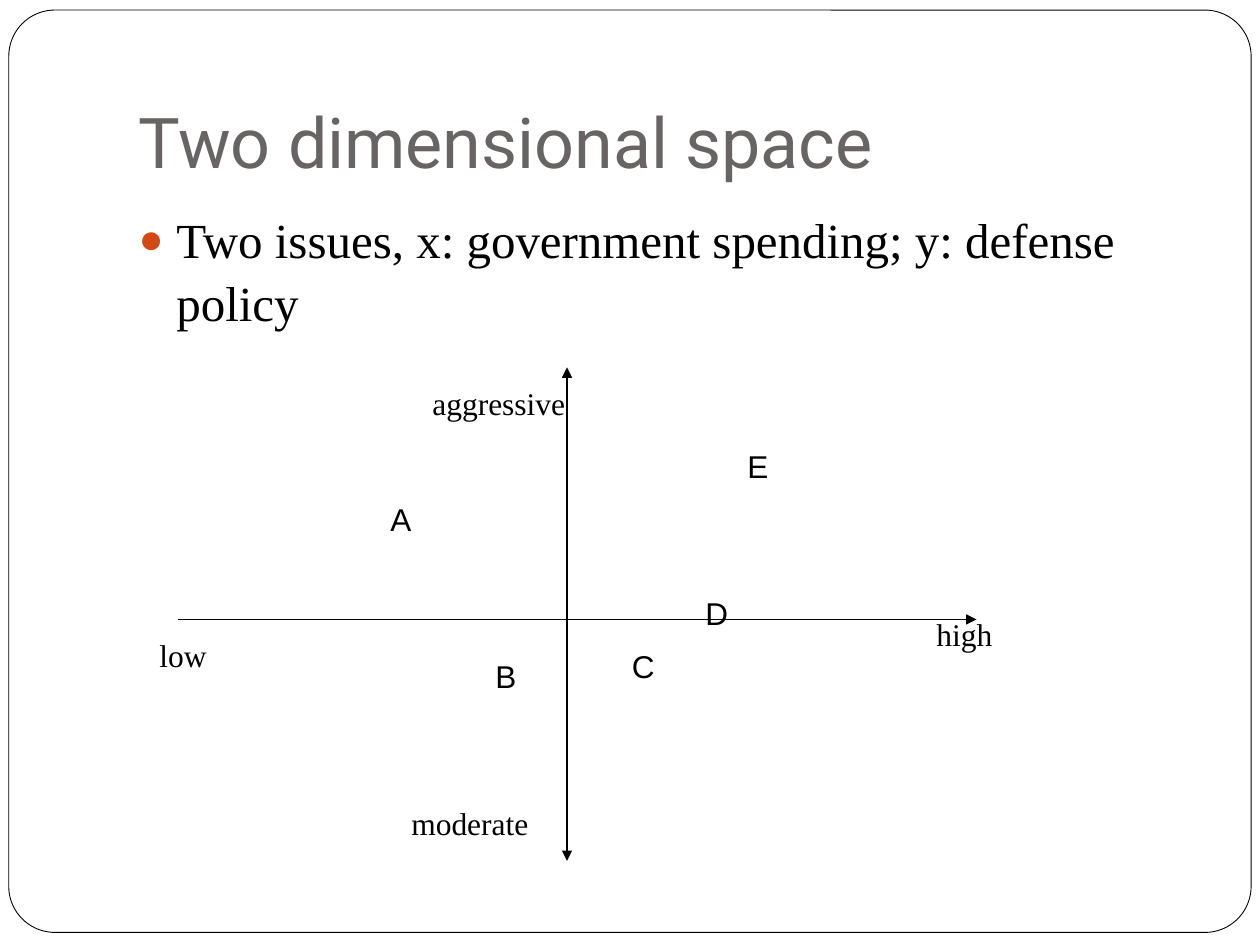
from pptx import Presentation
from pptx.dml.color import RGBColor
from pptx.enum.shapes import MSO_CONNECTOR as Connector, MSO_SHAPE as Shape
from pptx.enum.text import MSO_ANCHOR as Anchor, MSO_AUTO_SIZE as AutoSize, PP_ALIGN as Align
from pptx.oxml.ns import qn
from pptx.util import Inches, Pt
from lxml.etree import SubElement

# Content
TITLE = "Two dimensional space"
BULLET = "Two issues, x: government spending; y: defense policy"
SERIF, SANS, HEADING = "Times New Roman", "Arial", "Roboto"
COLORS = {"paper": "FFFFFF", "ink": "000000", "title": "696464", "bullet": "D34817"}

# Diagram positions in twelfths of an inch
GRID = 1 / 12
AXIS_LABELS = [("high", 88, 58), ("aggressive", 40, 36), ("moderate", 38, 76), ("low", 14, 60)]
POINTS = [("C", 59, 61), ("E", 70, 42), ("B", 46, 62), ("D", 66, 56), ("A", 36, 47)]
LABEL_WIDTH, POINT_WIDTH, LABEL_HEIGHT = 19, 5, 0.4
AXES = [  # start, end, arrowheads
    ((54, 35), (54, 82), ("headEnd", "tailEnd")),
    ((17, 59), (93, 59), ("tailEnd",)),
]


def color(name):
    return RGBColor.from_string(COLORS[name])


def grid(*units):
    return [Inches(unit * GRID) for unit in units]


def place(shape, left, top, width, height):
    shape.left, shape.top = Inches(left), Inches(top)
    shape.width, shape.height = Inches(width), Inches(height)


def style(paragraph, font_name, size, color_name):
    paragraph.alignment = Align.LEFT
    font = paragraph.runs[0].font
    font.name, font.size = font_name, Pt(size)
    font.color.rgb = color(color_name)


def add_label(text, left, top, width, font_name):
    box = slide.shapes.add_textbox(*grid(left, top, width), Inches(LABEL_HEIGHT))
    frame = box.text_frame
    frame.word_wrap = True
    frame.auto_size = AutoSize.SHAPE_TO_FIT_TEXT
    frame.text = text
    style(frame.paragraphs[0], font_name, 18, "ink")


def add_axis(start, end, arrowheads):
    axis = slide.shapes.add_connector(Connector.STRAIGHT, *grid(*start, *end))
    axis.line.color.rgb = color("ink")
    axis.line.width = Pt(0.75)
    line = axis.line._get_or_add_ln()
    for arrowhead in arrowheads:
        SubElement(line, qn(f"a:{arrowhead}"), type="triangle")
    SubElement(axis._element.spPr, qn("a:effectLst"))


presentation = Presentation()
presentation.slide_width, presentation.slide_height = Inches(10), Inches(7.5)
slide = presentation.slides.add_slide(presentation.slide_layouts[1])
title, body = slide.placeholders

# Rounded frame, behind everything
border = slide.shapes.add_shape(Shape.ROUNDED_RECTANGLE, 0, 0, 0, 0)
place(border, 0.07, 0.08, 9.86, 7.32)
border.adjustments[0] = 0.05
border.shadow.inherit = False
border.fill.solid()
border.fill.fore_color.rgb = color("paper")
border.line.color.rgb = color("ink")
border.line.width = Pt(0.5)
title._element.addprevious(border._element)

# Title
place(title, 1, 0.3, 8.5, 1.25)
title.text_frame.text = TITLE
title.text_frame.vertical_anchor = Anchor.BOTTOM
title.text_frame.margin_bottom = Inches(0.1)
style(title.text_frame.paragraphs[0], HEADING, 40, "title")

# Bulleted statement
place(body, 1, 1.58, 8.5, 5)
body.text_frame.text = BULLET
statement = body.text_frame.paragraphs[0]
style(statement, SERIF, 28, "ink")
statement.space_before = Pt(5.8)
statement.line_spacing = 1.07
properties = statement._p.get_or_add_pPr()
properties.set("marL", str(Inches(0.3)))
properties.set("indent", str(-Inches(0.3)))
bullet_color = SubElement(properties, qn("a:buClr"))
SubElement(bullet_color, qn("a:srgbClr"), val=COLORS["bullet"])
SubElement(properties, qn("a:buSzPct"), val="85000")
SubElement(properties, qn("a:buChar"), char="●")

# Axes, their labels and the points
for axis in AXES:
    add_axis(*axis)
for text, left, top in AXIS_LABELS:
    add_label(text, left, top, LABEL_WIDTH, SERIF)
for text, left, top in POINTS:
    add_label(text, left, top, POINT_WIDTH, SANS)

presentation.save("out.pptx")
